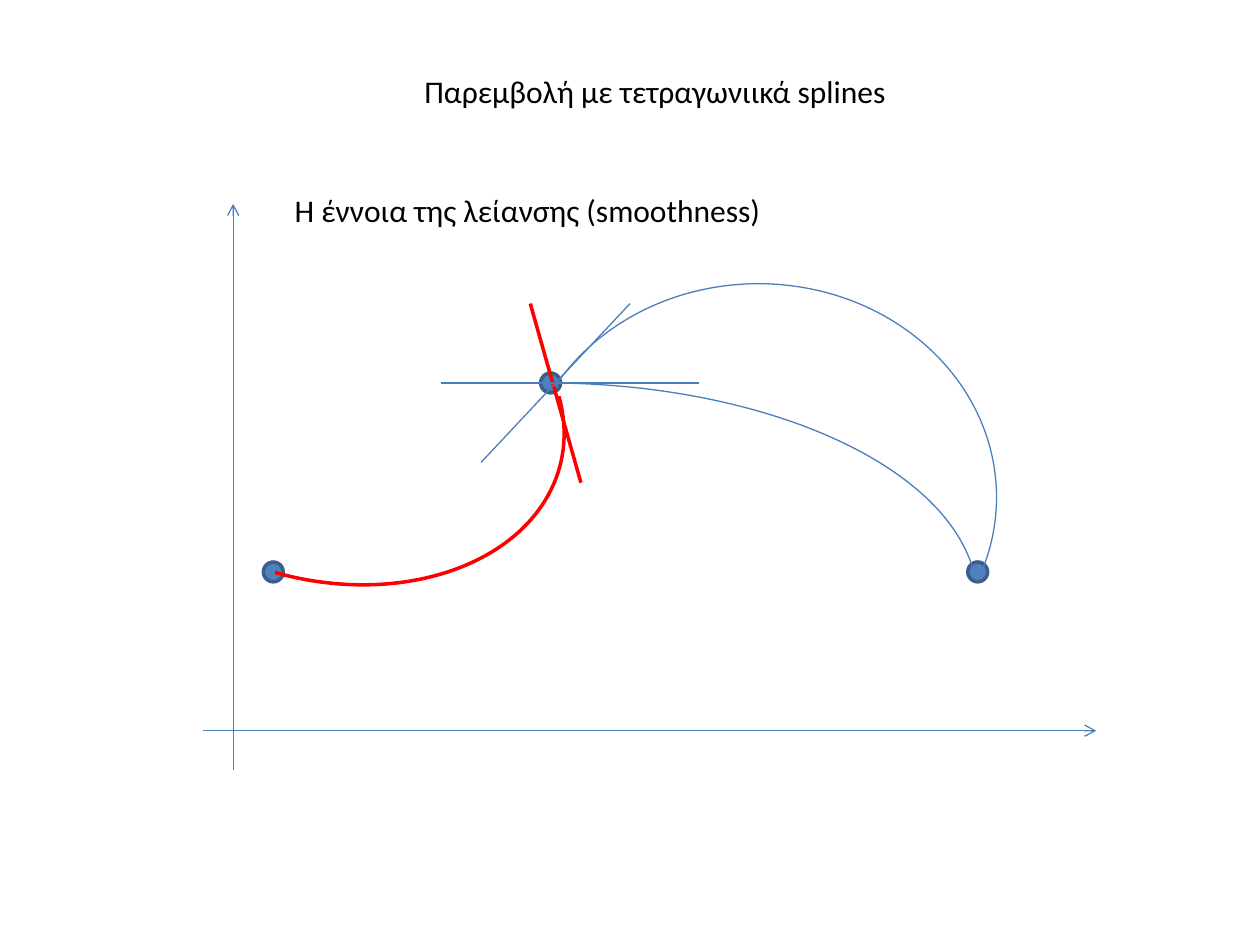
from lxml.etree import SubElement
from pptx import Presentation
from pptx.dml.color import RGBColor
from pptx.enum.shapes import MSO_CONNECTOR as Connector, MSO_SHAPE as Shape
from pptx.enum.text import MSO_ANCHOR as Anchor, MSO_AUTO_SIZE as AutoSize, PP_ALIGN as Align
from pptx.oxml.ns import qn
from pptx.util import Cm, Pt

BLUE, DOT_FILL, DOT_EDGE, RED, BLACK = "4B7EBC", "4F81BD", "3A5F8C", "FF0000", "000000"
THIN, THICK = 0.75, 2
DOT_SIZE = 0.4

# Interpolation points, in cm
START, MIDDLE, END = (5.51, 11.53), (11.1, 7.72), (19.71, 11.53)


def color(hex_value):
    return RGBColor.from_string(hex_value)


def style_line(shape, hex_value, width):
    shape.line.color.rgb = color(hex_value)
    shape.line.width = Pt(width)


def write_text(shape, text, align, wrap):
    frame = shape.text_frame
    frame.text = text
    frame.word_wrap = wrap
    frame.auto_size = AutoSize.SHAPE_TO_FIT_TEXT
    frame.vertical_anchor = Anchor.TOP
    paragraph = frame.paragraphs[0]
    paragraph.alignment = align
    paragraph.font.name = "Calibri"
    paragraph.font.size = Pt(18)
    paragraph.font.color.rgb = color(BLACK)


def add_title(slide, text, left, top, width, height):
    title = slide.shapes.title
    title.left, title.top = Cm(left), Cm(top)
    title.width, title.height = Cm(width), Cm(height)
    write_text(title, text, Align.CENTER, True)


def add_label(slide, text, left, top, width, height):
    box = slide.shapes.add_textbox(Cm(left), Cm(top), Cm(width), Cm(height))
    write_text(box, text, Align.LEFT, False)


def add_line(slide, start, end, hex_value=BLUE, width=THIN, arrow=False):
    points = [Cm(value) for value in (*start, *end)]
    line = slide.shapes.add_connector(Connector.STRAIGHT, *points)
    style_line(line, hex_value, width)
    if arrow:
        SubElement(line.line._get_or_add_ln(), qn("a:tailEnd"), type="arrow")
    SubElement(line._element.spPr, qn("a:effectLst"))


def add_dot(slide, center):
    left, top = (Cm(value - DOT_SIZE / 2) for value in center)
    dot = slide.shapes.add_shape(Shape.OVAL, left, top, Cm(DOT_SIZE), Cm(DOT_SIZE))
    dot.shadow.inherit = False
    dot.fill.solid()
    dot.fill.fore_color.rgb = color(DOT_FILL)
    style_line(dot, DOT_EDGE, THICK)


def add_arc(slide, box, angles, hex_value=BLUE, width=THIN, rotation=0):
    arc = slide.shapes.add_shape(Shape.ARC, *[Cm(value) for value in box])
    arc.shadow.inherit = False
    arc.fill.background()
    arc.adjustments[0], arc.adjustments[1] = angles
    arc.rotation = rotation
    style_line(arc, hex_value, width)


def main():
    presentation = Presentation()
    presentation.slide_width, presentation.slide_height = Cm(25.4), Cm(19.05)
    slide = presentation.slides.add_slide(presentation.slide_layouts[5])

    # Headings
    add_title(slide, "Παρεμβολή με τετραγωνιικά splines", 3.3, 1.32, 19.81, 1.02)
    add_label(slide, "Η έννοια της λείανσης (smoothness)", 5.69, 3.73, 10.16, 1.02)

    # Axes
    add_line(slide, (4.7, 15.52), (4.7, 4.11), arrow=True)
    add_line(slide, (4.09, 14.73), (22.1, 14.73), arrow=True)

    for point in (START, MIDDLE, END):
        add_dot(slide, point)

    # Spline pieces: two candidates on the right, one on the left
    add_arc(slide, (2.31, 7.72, 17.4, 8.79), (162, 213.42))
    add_arc(slide, (10.49, 5.72, 9.6, 8.61), (124.67, 11.29))
    add_arc(slide, (3.15, 3.43, 6.96, 9.6), (152.29, 2.99), RED, THICK, rotation=103.2)

    # Tangents at the middle point
    add_line(slide, (10.69, 6.12), (11.71, 9.73), RED, THICK)
    add_line(slide, (8.89, 7.72), (14.1, 7.72))
    add_line(slide, (12.7, 6.12), (9.7, 9.32))

    presentation.save("out.pptx")


if __name__ == "__main__":
    main()
